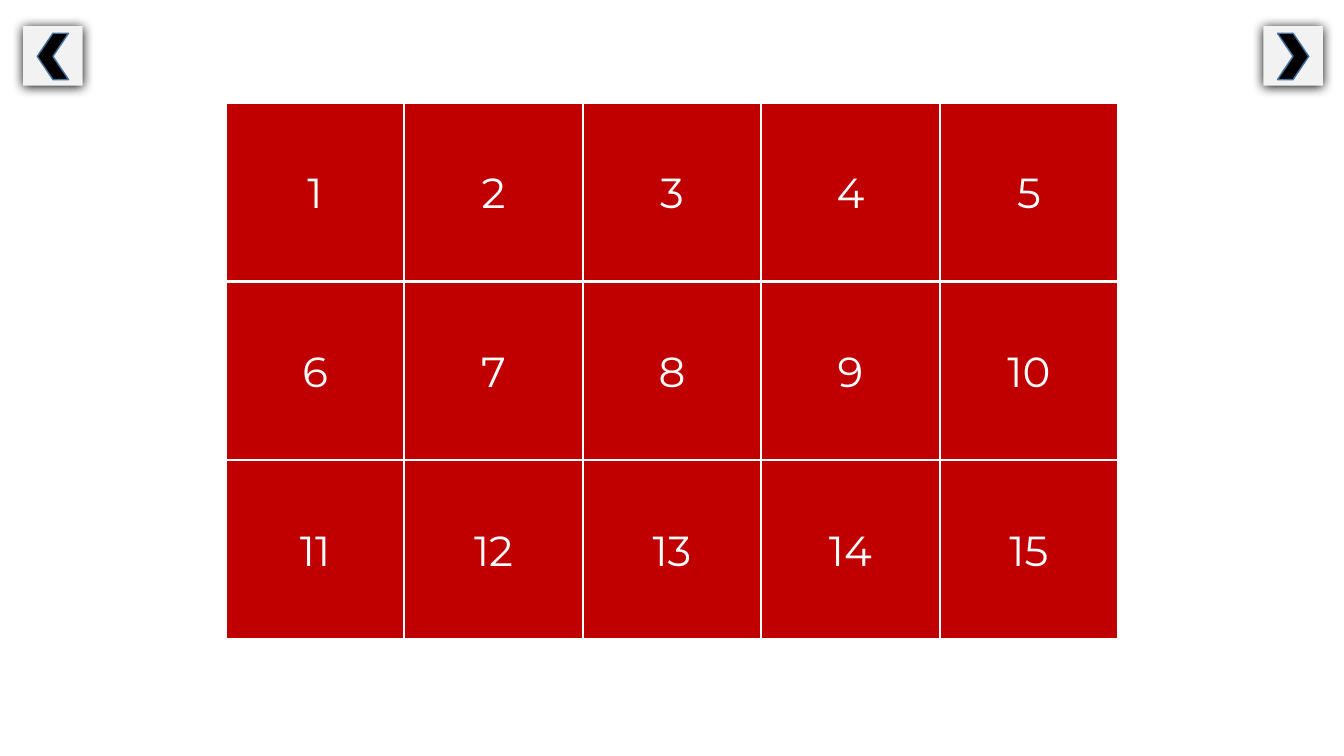
from lxml.etree import SubElement as Sub
from pptx import Presentation
from pptx.dml.color import RGBColor as RGB
from pptx.enum.shapes import MSO_SHAPE as Kind
from pptx.enum.text import MSO_ANCHOR as Anchor, PP_ALIGN as Align
from pptx.oxml.ns import qn
from pptx.util import Inches, Pt

HUES = {
    "tile": "C00000",
    "text": "FFFFFF",
    "rule": "FFFFFF",
    "page": "FFFFFF",
    "plate": "F2F2F2",
    "arrow": "000000",
    "edge": "43739E",
    "shade": "000000",
}
TYPE = {"name": "Montserrat", "size": Pt(30), "bold": False}


def hue(key):
    return RGB.from_string(HUES[key])


def draw(home, kind, box, fill, line=None, width=1):
    shape = home.add_shape(kind, *map(Inches, box))
    shape.shadow.inherit = False
    shape.fill.solid()
    shape.fill.fore_color.rgb = hue(fill)
    if line:
        shape.line.color.rgb = hue(line)
        shape.line.width = Pt(width)
    else:
        shape.line.fill.background()
    return shape


def cast(shape):
    effects = shape.element.spPr.find(qn("a:effectLst"))
    shadow = Sub(effects, qn("a:outerShdw"), blurRad=str(Pt(8.5)),
                 dist=str(Pt(1)), dir="5400000", algn="t", rotWithShape="0")
    Sub(shadow, qn("a:srgbClr"), val=HUES["shade"])


def button(slide, box, back=False):
    left, top, wide, high = box
    group = slide.shapes.add_group_shape().shapes
    plate = draw(group, Kind.RECTANGLE, box, "plate")
    cast(plate)
    inner = (left + 0.14, top + 0.07, wide - 0.28, high - 0.13)
    arrow = draw(group, Kind.CHEVRON, inner, "arrow", "edge")
    if back:
        for part in (plate, arrow):
            part.element.spPr.get_or_add_xfrm().set("flipH", "1")


def label(shape, text):
    frame = shape.text_frame
    frame.vertical_anchor = Anchor.MIDDLE
    para = frame.paragraphs[0]
    para.alignment = Align.CENTER
    run = para.add_run()
    run.text = text
    for key, value in TYPE.items():
        setattr(run.font, key, value)
    run.font.color.rgb = hue("text")


def board(slide, box, rows, cols):
    left, top, wide, high = box
    width, height = wide / cols, high / rows
    for index in range(rows * cols):
        row, col = divmod(index, cols)
        place = (left + col * width, top + row * height, width, height)
        tile = draw(slide.shapes, Kind.RECTANGLE, place, "tile", "rule", 1.5)
        label(tile, str(index + 1))


def main():
    deck = Presentation()
    deck.slide_width = Inches(13.33)
    deck.slide_height = Inches(7.5)
    slide = deck.slides.add_slide(deck.slide_layouts[6])
    slide.background.fill.solid()
    slide.background.fill.fore_color.rgb = hue("page")
    button(slide, (0.23, 0.26, 0.59, 0.59), back=True)
    button(slide, (12.53, 0.26, 0.59, 0.59))
    board(slide, (2.24, 1.02, 8.85, 5.32), rows=3, cols=5)
    deck.save("out.pptx")


if __name__ == "__main__":
    main()
